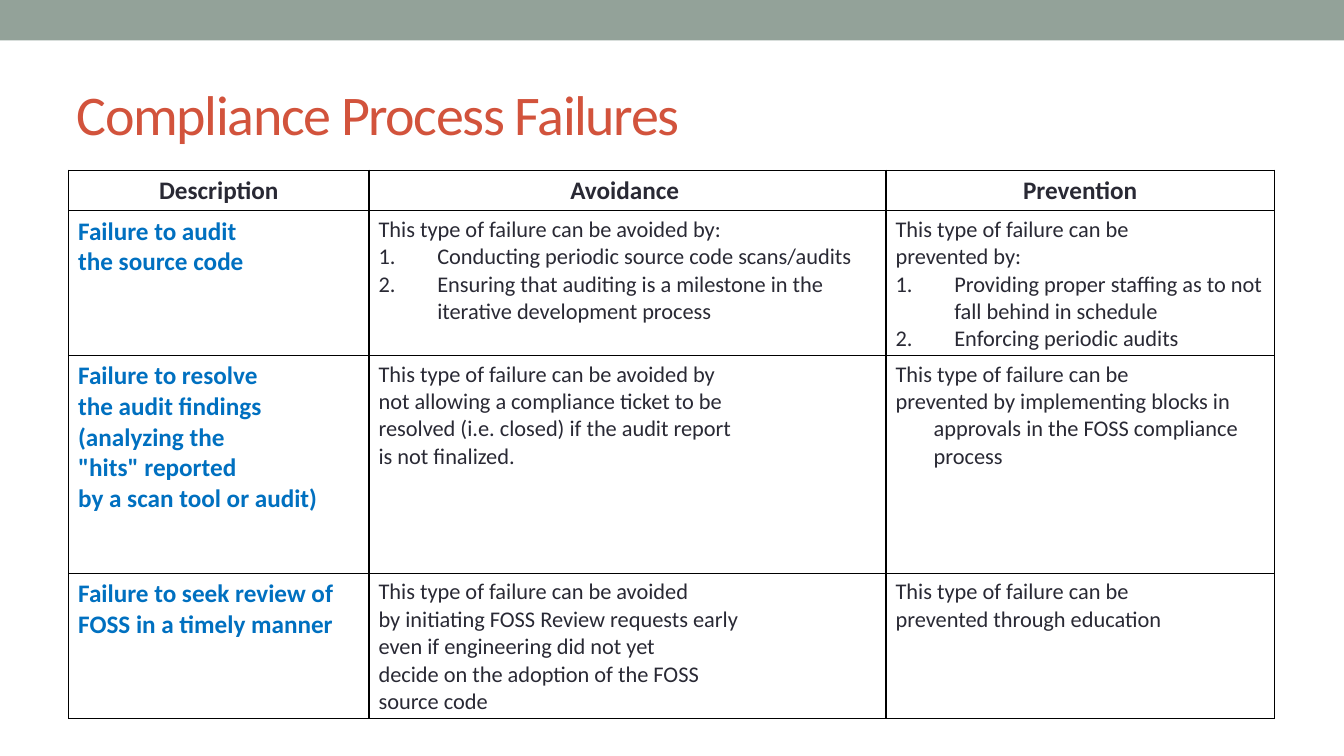
from dataclasses import dataclass

from lxml.etree import SubElement as Sub
from pptx import Presentation
from pptx.dml.color import RGBColor as Rgb
from pptx.enum.shapes import MSO_SHAPE as Kind
from pptx.enum.text import MSO_ANCHOR as Anchor, PP_ALIGN as Align
from pptx.oxml.ns import qn
from pptx.slide import Slide
from pptx.table import _Cell as Cell
from pptx.text.text import _Paragraph as Para
from pptx.util import Cm, Pt


@dataclass(frozen=True)
class Theme:
    font: str = "Calibri"
    band: str = "93A299"
    title: str = "D2533C"
    ink: str = "292934"
    blue: str = "0070C0"
    line: str = "000000"
    big: int = 40
    head: int = 18
    body: int = 16


@dataclass(frozen=True)
class Style:
    size: int
    color: str
    bold: bool = False
    align: Align = Align.LEFT
    hang: float = 0


@dataclass(frozen=True)
class Block:
    lines: tuple[str, ...]
    style: Style
    steps: tuple[str, ...] = ()


THEME = Theme()
TITLE = Style(THEME.big, THEME.title)
HEAD = Style(THEME.head, THEME.ink, True, Align.CENTER)
LABEL = Style(THEME.head, THEME.blue, True)
LIST = Style(THEME.body, THEME.ink, hang=1.48)
BODY = Style(THEME.body, THEME.ink, hang=0.96)

COLS = (7.57, 13.03, 9.78)
ROWS = (0.99, 3.53, 5.49, 3.53)
GRID = (
    (
        Block(("Description",), HEAD),
        Block(("Avoidance ",), HEAD),
        Block(("Prevention",), HEAD),
    ),
    (
        Block(("Failure to audit", "the source code"), LABEL),
        Block(("This type of failure can be avoided by:",), LIST, (
            "Conducting periodic source code scans/audits",
            "Ensuring that auditing is a milestone in the iterative development process",
        )),
        Block(("This type of failure can be", "prevented by:"), LIST, (
            "Providing proper staffing as to not fall behind in schedule",
            "Enforcing periodic audits",
        )),
    ),
    (
        Block((
            "Failure to resolve",
            "the audit findings",
            "(analyzing the",
            '"hits" reported',
            "by a scan tool or audit)",
        ), LABEL),
        Block((
            "This type of failure can be avoided by",
            "not allowing a compliance ticket to be",
            "resolved (i.e. closed) if the audit report",
            "is not finalized.",
        ), BODY),
        Block((
            "This type of failure can be",
            "prevented by implementing blocks in approvals in the FOSS compliance process",
        ), BODY),
    ),
    (
        Block(("Failure to seek review of FOSS in a timely manner",), LABEL),
        Block((
            "This type of failure can be avoided",
            "by initiating FOSS Review requests early",
            "even if engineering did not yet",
            "decide on the adoption of the FOSS",
            "source code",
        ), BODY),
        Block(("This type of failure can be", "prevented through education"), BODY),
    ),
)


def write(para: Para, text: str, style: Style, step: bool = False) -> None:
    para.alignment = style.align
    props = para._p.get_or_add_pPr()
    props.set("marL", str(Cm(style.hang)))
    props.set("indent", str(-Cm(style.hang)))
    if step:
        Sub(props, qn("a:buAutoNum"), type="arabicPeriod")
    run = para.add_run()
    run.text = text
    font = run.font
    font.name, font.size, font.bold = THEME.font, Pt(style.size), style.bold
    font.color.rgb = Rgb.from_string(style.color)


def frame(cell: Cell) -> None:
    """Draw the four sides of a cell, ahead of its fill."""
    props = cell._tc.get_or_add_tcPr()
    for spot, side in enumerate(("lnL", "lnR", "lnT", "lnB")):
        edge = Sub(props, qn(f"a:{side}"), w=str(Pt(1)))
        fill = Sub(edge, qn("a:solidFill"))
        Sub(fill, qn("a:srgbClr"), val=THEME.line)
        props.insert(spot, edge)


def fill_cell(cell: Cell, block: Block) -> None:
    cell.margin_left = cell.margin_right = Cm(0.24)
    cell.margin_top = cell.margin_bottom = Cm(0.13)
    cell.fill.background()
    frame(cell)
    text = cell.text_frame
    for spot, line in enumerate(block.lines + block.steps):
        para = text.add_paragraph() if spot else text.paragraphs[0]
        write(para, line, block.style, spot >= len(block.lines))


def add_band(slide: Slide, width: int) -> None:
    band = slide.shapes.add_shape(Kind.RECTANGLE, 0, 0, width, Cm(1.02))
    band.shadow.inherit = False
    band.fill.solid()
    band.fill.fore_color.rgb = Rgb.from_string(THEME.band)
    band.line.fill.background()


def add_title(slide: Slide) -> None:
    box = slide.shapes.add_textbox(Cm(1.69), Cm(1.48), Cm(30.48), Cm(2.74))
    text = box.text_frame
    text.word_wrap = True
    text.vertical_anchor = Anchor.MIDDLE
    para = text.paragraphs[0]
    write(para, "Compliance Process Failures", TITLE)
    para.runs[0]._r.get_or_add_rPr().set("spc", "-100")


def add_grid(slide: Slide) -> None:
    table = slide.shapes.add_table(
        len(ROWS), len(COLS), Cm(1.73), Cm(4.29), Cm(sum(COLS)), Cm(sum(ROWS))
    ).table
    table.first_row = table.horz_banding = False
    for col, width in zip(table.columns, COLS):
        col.width = Cm(width)
    for row, height, blocks in zip(table.rows, ROWS, GRID):
        row.height = Cm(height)
        for cell, block in zip(row.cells, blocks):
            fill_cell(cell, block)


def main() -> None:
    deck = Presentation()
    deck.slide_width, deck.slide_height = Cm(33.87), Cm(19.05)
    slide = deck.slides.add_slide(deck.slide_layouts[6])
    # Top band and title
    add_band(slide, deck.slide_width)
    add_title(slide)
    # Table of failures
    add_grid(slide)
    deck.save("out.pptx")


if __name__ == "__main__":
    main()
